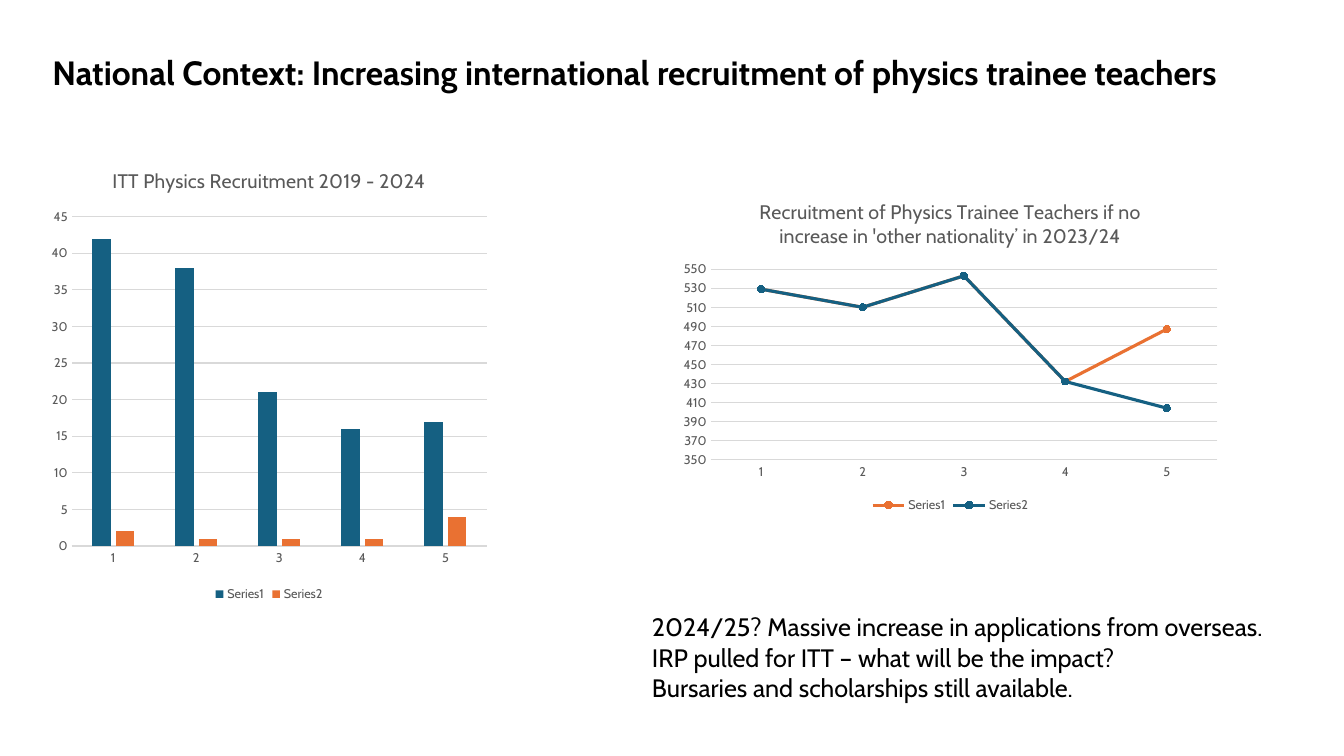
from dataclasses import dataclass

import lxml.etree
import pptx
import pptx.chart.axis
import pptx.chart.chart
import pptx.chart.data
import pptx.dml.color
import pptx.enum.chart
import pptx.enum.text
import pptx.oxml
import pptx.slide
import pptx.text.text
import pptx.util
from pptx.util import Cm


@dataclass(frozen=True)
class Theme:
    font: str = "Cabin"
    black: str = "000000"
    grey: str = "595959"
    rule: str = "D9D9D9"
    blue: str = "156082"
    orange: str = "E97132"
    heading_size: float = 24
    body_size: float = 18
    chart_title_size: float = 14
    label_size: float = 9
    rule_width: float = 0.75
    trend_width: float = 2.25
    marker_size: int = 5


THEME = Theme()


@dataclass(frozen=True)
class Frame:
    left: float
    top: float
    width: float
    height: float

    def lengths(self) -> tuple[Cm, Cm, Cm, Cm]:
        return Cm(self.left), Cm(self.top), Cm(self.width), Cm(self.height)


@dataclass(frozen=True)
class TextBlock:
    frame: Frame
    lines: tuple[str, ...]
    size: float
    bold: bool = False


@dataclass(frozen=True)
class Series:
    values: tuple[int, ...]
    color: str


@dataclass(frozen=True)
class ChartBlock:
    frame: Frame
    kind: pptx.enum.chart.XL_CHART_TYPE
    title: str
    series: tuple[Series, ...]
    minimum: int
    maximum: int
    step: int
    number_format: str


TEXTS = (
    TextBlock(
        Frame(1.07, 1.19, 32.2, 1.28),
        ("National Context: Increasing international recruitment of physics trainee teachers",),
        THEME.heading_size,
        bold=True,
    ),
    TextBlock(
        Frame(16.18, 15.29, 16.38, 2.57),
        (
            "2024/25? Massive increase in applications from overseas.",
            "IRP pulled for ITT – what will be the impact?",
            "Bursaries and scholarships still available.",
        ),
        THEME.body_size,
    ),
)

CHARTS = (
    ChartBlock(
        Frame(16.94, 4.6, 14.02, 8.43),
        pptx.enum.chart.XL_CHART_TYPE.LINE_MARKERS,
        "Recruitment of Physics Trainee Teachers if no increase in 'other nationality’ in 2023/24",
        (
            Series((529, 510, 543, 432, 487), THEME.orange),
            Series((529, 510, 543, 432, 404), THEME.blue),
        ),
        350, 550, 20, "#,##0",
    ),
    ChartBlock(
        Frame(1.07, 3.76, 11.43, 11.51),
        pptx.enum.chart.XL_CHART_TYPE.COLUMN_CLUSTERED,
        "ITT Physics Recruitment 2019 - 2024",
        (
            Series((42, 38, 21, 16, 17), THEME.blue),
            Series((2, 1, 1, 1, 4), THEME.orange),
        ),
        0, 45, 5, "General",
    ),
)


def rgb(color: str) -> pptx.dml.color.RGBColor:
    return pptx.dml.color.RGBColor.from_string(color)


def style_font(font: pptx.text.text.Font, size: float, color: str, bold: bool = False) -> None:
    font.name = THEME.font
    font.size = pptx.util.Pt(size)
    font.bold = bold
    font.color.rgb = rgb(color)


def add_text(page: pptx.slide.Slide, block: TextBlock) -> None:
    text_frame = page.shapes.add_textbox(*block.frame.lengths()).text_frame
    text_frame.word_wrap = False
    text_frame.auto_size = pptx.enum.text.MSO_AUTO_SIZE.SHAPE_TO_FIT_TEXT
    text_frame.text = "\n".join(block.lines)
    for para in text_frame.paragraphs:
        for span in para.runs:
            style_font(span.font, block.size, THEME.black, block.bold)


def draw_rule(line: pptx.dml.line.LineFormat) -> None:
    line.color.rgb = rgb(THEME.rule)
    line.width = pptx.util.Pt(THEME.rule_width)


def style_axes(chart: pptx.chart.chart.Chart, block: ChartBlock) -> None:
    for axis in (chart.category_axis, chart.value_axis):
        axis.major_tick_mark = pptx.enum.chart.XL_TICK_MARK.NONE
        axis.minor_tick_mark = pptx.enum.chart.XL_TICK_MARK.NONE
        style_font(axis.tick_labels.font, THEME.label_size, THEME.grey)
    draw_rule(chart.category_axis.format.line)
    values = chart.value_axis
    values.format.line.fill.background()
    values.minimum_scale = block.minimum
    values.maximum_scale = block.maximum
    values.major_unit = block.step
    values.tick_labels.number_format = block.number_format
    values.tick_labels.number_format_is_linked = False
    draw_rule(values.major_gridlines.format.line)


def paint_series(chart: pptx.chart.chart.Chart, block: ChartBlock) -> None:
    plot = chart.plots[0]
    plot.vary_by_categories = False
    is_column = block.kind == pptx.enum.chart.XL_CHART_TYPE.COLUMN_CLUSTERED
    if is_column:
        plot.gap_width = 219
        plot.overlap = -27
    for drawn, series in zip(plot.series, block.series):
        color = rgb(series.color)
        if is_column:
            drawn.format.fill.solid()
            drawn.format.fill.fore_color.rgb = color
            continue
        drawn.smooth = False
        drawn.format.line.color.rgb = color
        drawn.format.line.width = pptx.util.Pt(THEME.trend_width)
        drawn.marker.style = pptx.enum.chart.XL_MARKER_STYLE.CIRCLE
        drawn.marker.size = THEME.marker_size
        drawn.marker.format.fill.solid()
        drawn.marker.format.fill.fore_color.rgb = color
        drawn.marker.format.line.color.rgb = color


def add_chart(page: pptx.slide.Slide, block: ChartBlock) -> None:
    data = pptx.chart.data.CategoryChartData()
    data.categories = [str(number) for number in range(1, 6)]
    for number, series in enumerate(block.series, start=1):
        data.add_series(f"Series{number}", series.values)
    chart = page.shapes.add_chart(block.kind, *block.frame.lengths(), data).chart
    style_font(chart.font, THEME.label_size, THEME.grey)
    chart.has_title = True
    chart.chart_title.include_in_layout = False
    title = chart.chart_title.text_frame
    title.text = block.title
    style_font(title.paragraphs[0].runs[0].font, THEME.chart_title_size, THEME.grey)
    chart.has_legend = True
    chart.legend.position = pptx.enum.chart.XL_LEGEND_POSITION.BOTTOM
    chart.legend.include_in_layout = False
    style_font(chart.legend.font, THEME.label_size, THEME.grey)
    style_axes(chart, block)
    paint_series(chart, block)


def main() -> None:
    deck = pptx.Presentation()
    deck.slide_width, deck.slide_height = Cm(33.87), Cm(19.05)
    page = deck.slides.add_slide(deck.slide_layouts[6])
    for chart_block in CHARTS:
        add_chart(page, chart_block)
    for text_block in TEXTS:
        add_text(page, text_block)
    deck.save("out.pptx")


if __name__ == "__main__":
    main()
